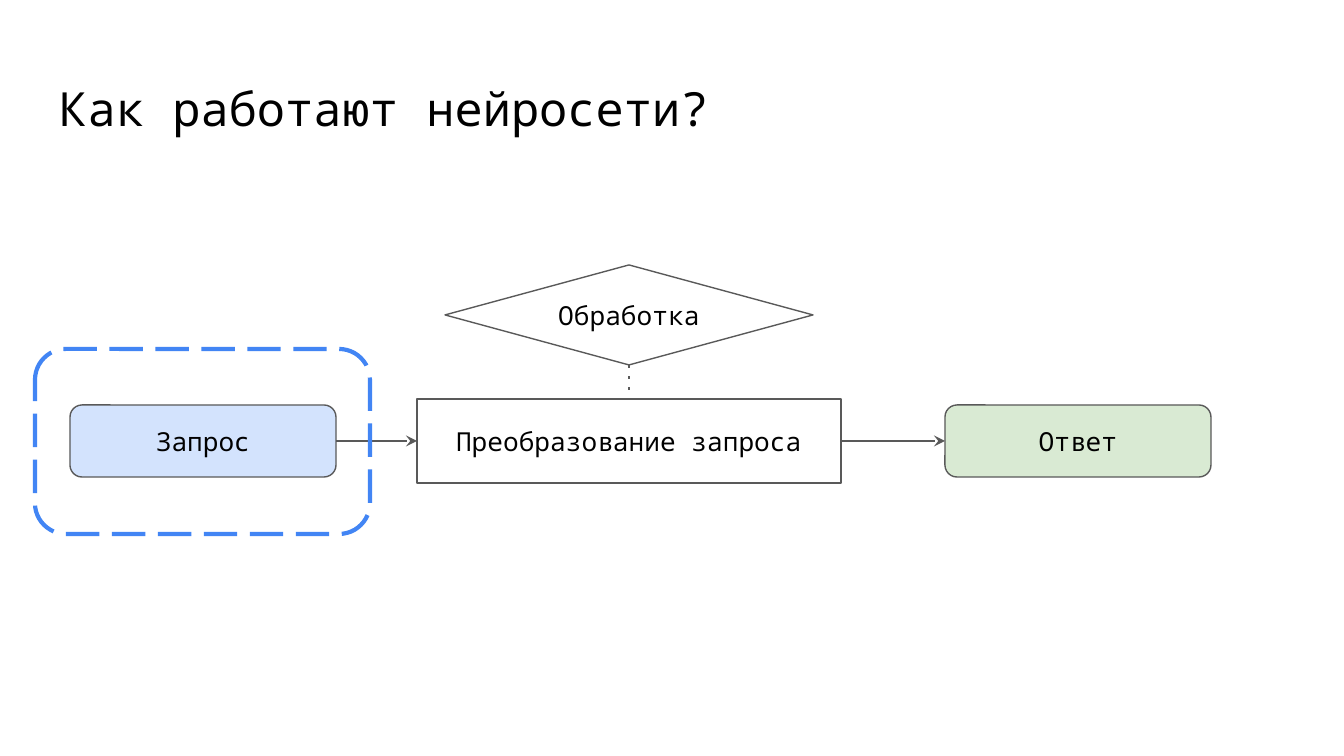
from lxml.etree import SubElement
from pptx import Presentation
from pptx.dml.color import RGBColor
from pptx.enum.dml import MSO_LINE
from pptx.enum.shapes import MSO_CONNECTOR, MSO_SHAPE
from pptx.enum.text import MSO_ANCHOR, MSO_AUTO_SIZE, PP_ALIGN
from pptx.oxml.ns import qn
from pptx.util import Emu, Inches, Pt

TITLE = "Как работают нейросети?"
FONT = "Noto Sans Mono"
COLORS = {
    "text": "000000",
    "outline": "595959",
    "plain": "FFFFFF",
    "request": "D3E3FD",
    "answer": "D9EAD3",
    "highlight": "4285F4",
}

# Lengths in px: left, top, width, height
SLIDE_SIZE = (1344, 756)
TITLE_BOX = (46, 66, 1252, 84)
HIGHLIGHT_BOX = (35, 349, 335, 185)
STEPS = {
    "request": ("Запрос", MSO_SHAPE.ROUNDED_RECTANGLE, (70, 405, 266, 72), "request"),
    "transform": ("Преобразование запроса", MSO_SHAPE.RECTANGLE, (417, 399, 424, 84), "plain"),
    "processing": ("Обработка", MSO_SHAPE.FLOWCHART_DECISION, (445, 265, 368, 100), "plain"),
    "answer": ("Ответ", MSO_SHAPE.ROUNDED_RECTANGLE, (945, 405, 266, 72), "answer"),
}
# Connection sites of a shape
TOP, LEFT, BOTTOM, RIGHT = range(4)
# From, site, to, site, line ending or dash as (tag, attributes)
LINKS = [
    ("request", RIGHT, "transform", LEFT, ("a:tailEnd", {"type": "stealth"})),
    ("transform", RIGHT, "answer", LEFT, ("a:tailEnd", {"type": "stealth"})),
    ("processing", BOTTOM, "transform", TOP, ("a:prstDash", {"val": "dot"})),
]


def px(length):
    return Emu(round(length * 914400 / 134.4))


def rgb(name):
    return RGBColor.from_string(COLORS[name])


def style_line(line, color, width):
    line.color.rgb = rgb(color)
    line.width = Pt(width)


def write(frame, text, size, align, anchor):
    frame.text = text
    frame.word_wrap = True
    frame.auto_size = MSO_AUTO_SIZE.NONE
    frame.vertical_anchor = anchor
    frame.margin_left = frame.margin_right = Inches(0.1)
    frame.margin_top = frame.margin_bottom = Inches(0.1)
    paragraph = frame.paragraphs[0]
    paragraph.alignment = align
    paragraph.font.name = FONT
    paragraph.font.size = Pt(size)
    paragraph.font.color.rgb = rgb("text")


def add_outlined(slide, preset, box, color, width):
    shape = slide.shapes.add_shape(preset, *map(px, box))
    shape.shadow.inherit = False
    style_line(shape.line, color, width)
    return shape


def add_step(slide, label, preset, box, fill):
    step = add_outlined(slide, preset, box, "outline", 0.75)
    step.fill.solid()
    step.fill.fore_color.rgb = rgb(fill)
    write(step.text_frame, label, 14, PP_ALIGN.CENTER, MSO_ANCHOR.MIDDLE)
    return step


def add_link(slide, start, start_site, end, end_site, detail):
    link = slide.shapes.add_connector(MSO_CONNECTOR.STRAIGHT, 0, 0, 0, 0)
    link.begin_connect(start, start_site)
    link.end_connect(end, end_site)
    style_line(link.line, "outline", 1.5)
    properties = link.element.spPr
    tag, attributes = detail
    SubElement(properties.find(qn("a:ln")), qn(tag), attributes)
    SubElement(properties, qn("a:effectLst"))


def main():
    deck = Presentation()
    deck.slide_width, deck.slide_height = map(px, SLIDE_SIZE)
    slide = deck.slides.add_slide(deck.slide_layouts[5])

    title = slide.shapes.title
    title.left, title.top, title.width, title.height = map(px, TITLE_BOX)
    write(title.text_frame, TITLE, 25.2, PP_ALIGN.LEFT, MSO_ANCHOR.TOP)

    steps = {key: add_step(slide, *step) for key, step in STEPS.items()}
    for start, start_site, end, end_site, detail in LINKS:
        add_link(slide, steps[start], start_site, steps[end], end_site, detail)

    highlight = add_outlined(
        slide, MSO_SHAPE.ROUNDED_RECTANGLE, HIGHLIGHT_BOX, "highlight", 2.25)
    highlight.fill.background()
    highlight.line.dash_style = MSO_LINE.LONG_DASH

    deck.save("out.pptx")


if __name__ == "__main__":
    main()
